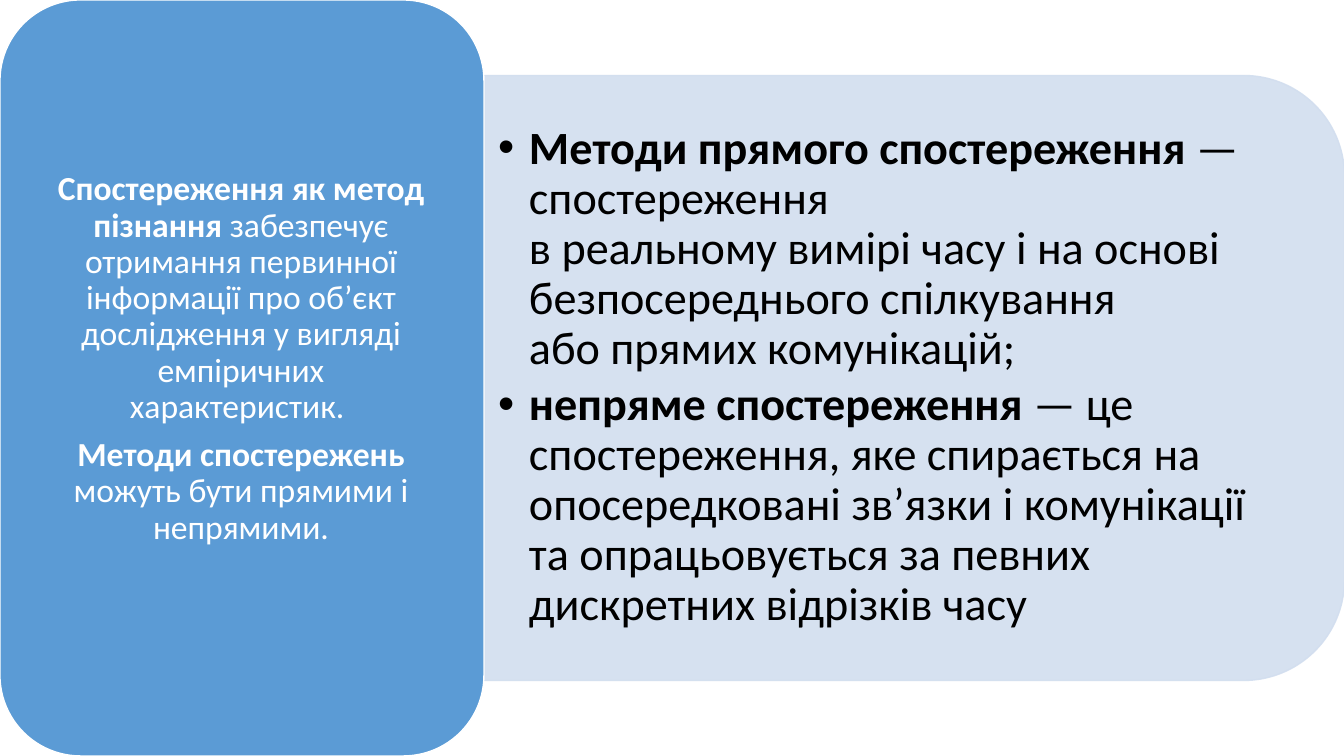
from copy import deepcopy

from lxml.etree import SubElement
from pptx import Presentation
from pptx.dml.color import RGBColor
from pptx.enum.shapes import MSO_SHAPE as Preset
from pptx.enum.text import MSO_ANCHOR as Anchor, MSO_AUTO_SIZE as AutoSize, PP_ALIGN as Align
from pptx.oxml.ns import qn
from pptx.util import Pt

PX = 12192000 / 1344
WHITE = RGBColor(0xFF, 0xFF, 0xFF)
BLACK = RGBColor(0x00, 0x00, 0x00)
BLUE = RGBColor(0x5B, 0x9B, 0xD5)
PALE_BLUE = RGBColor(0xD2, 0xDE, 0xEF)

# Each paragraph is a bold term and its plain explanation.
OBSERVATION = [
    ("Спостереження як метод пізнання ",
     "забезпечує отримання первинної інформації про об’єкт дослідження "
     "у вигляді емпіричних\nхарактеристик. "),
    ("Методи спостережень ", "можуть бути прямими і\nнепрямими."),
]
METHODS = [
    ("Методи прямого спостереження ",
     "— спостереження\nв реальному вимірі часу і на основі безпосереднього "
     "спілкування\nабо прямих комунікацій;"),
    ("непряме спостереження ",
     "— це спостереження, яке спирається на опосередковані зв’язки і комунікації\n"
     "та опрацьовується за певних дискретних відрізків часу"),
]


def px(length):
    return round(length * PX)


class SlideBuilder:
    font_name = "Calibri"

    def __init__(self):
        self.deck = Presentation()
        self.deck.slide_width, self.deck.slide_height = px(1344), px(756)
        self.page = self.deck.slides.add_slide(self.deck.slide_layouts[1])

    def panel(self, preset, area, fill, line, rotation=0, opacity=100):
        shape = self.page.shapes.add_shape(preset, *map(px, area))
        shape.shadow.inherit = False
        shape.rotation = rotation
        shape.fill.solid()
        shape.fill.fore_color.rgb = fill
        shape.line.color.rgb = line
        shape.line.width = Pt(1)
        if opacity < 100:
            for color in shape.element.spPr.iter(qn("a:srgbClr")):
                SubElement(color, qn("a:alpha"), val=str(opacity * 1000))

    def text(self, box, area, insets, paragraphs, size, color, space_after,
             align=Align.LEFT, bullet_indent=0):
        """Fill a placeholder and bring it in front of the panels."""
        box.element.getparent().append(box.element)
        box.left, box.top, box.width, box.height = map(px, area)
        frame = box.text_frame
        frame.word_wrap = True
        frame.auto_size = AutoSize.NONE
        frame.vertical_anchor = Anchor.MIDDLE
        (frame.margin_left, frame.margin_top,
         frame.margin_right, frame.margin_bottom) = map(px, insets)
        for index, (term, explanation) in enumerate(paragraphs):
            para = frame.add_paragraph() if index else frame.paragraphs[0]
            if bullet_indent:
                para.level = 1
                self.bullet(para, bullet_indent)
            para.alignment = align
            para.line_spacing = 0.9
            para.space_before = Pt(0)
            para.space_after = Pt(space_after)
            self.span(para, term, size, color, bold=True)
            for number, line in enumerate(explanation.split("\n")):
                if number:
                    self.line_break(para)
                self.span(para, line, size, color, bold=False)

    def bullet(self, para, indent):
        properties = para._p.get_or_add_pPr()
        properties.set("marL", str(px(indent)))
        properties.set("indent", str(-px(indent)))
        SubElement(properties, qn("a:buFont"), typeface="Arial")
        SubElement(properties, qn("a:buChar"), char="•")

    def span(self, para, text, size, color, bold):
        span = para.add_run()
        span.text = text
        span.font.name = self.font_name
        span.font.size = Pt(size)
        span.font.bold = bold
        span.font.color.rgb = color

    def line_break(self, para):
        """Break the line, keeping the text style of the last run."""
        style = deepcopy(para.runs[-1].font._element)
        para.add_line_break()
        para._p[-1].append(style)


def main():
    builder = SlideBuilder()
    title, body = builder.page.placeholders
    builder.panel(Preset.ROUND_2_SAME_RECTANGLE, (612, -52, 605, 860),
                  PALE_BLUE, PALE_BLUE, rotation=90, opacity=90)
    builder.panel(Preset.ROUNDED_RECTANGLE, (0, 0, 484, 756), BLUE, WHITE)
    builder.text(body, (484, 105, 831, 545), (14, 7, 14, 7), METHODS,
                 size=33, color=BLACK, space_after=5, bullet_indent=31)
    builder.text(title, (23, 23, 436, 709), (10, 5, 10, 42), OBSERVATION,
                 size=24, color=WHITE, space_after=8.4, align=Align.CENTER)
    builder.deck.save("out.pptx")


if __name__ == "__main__":
    main()
